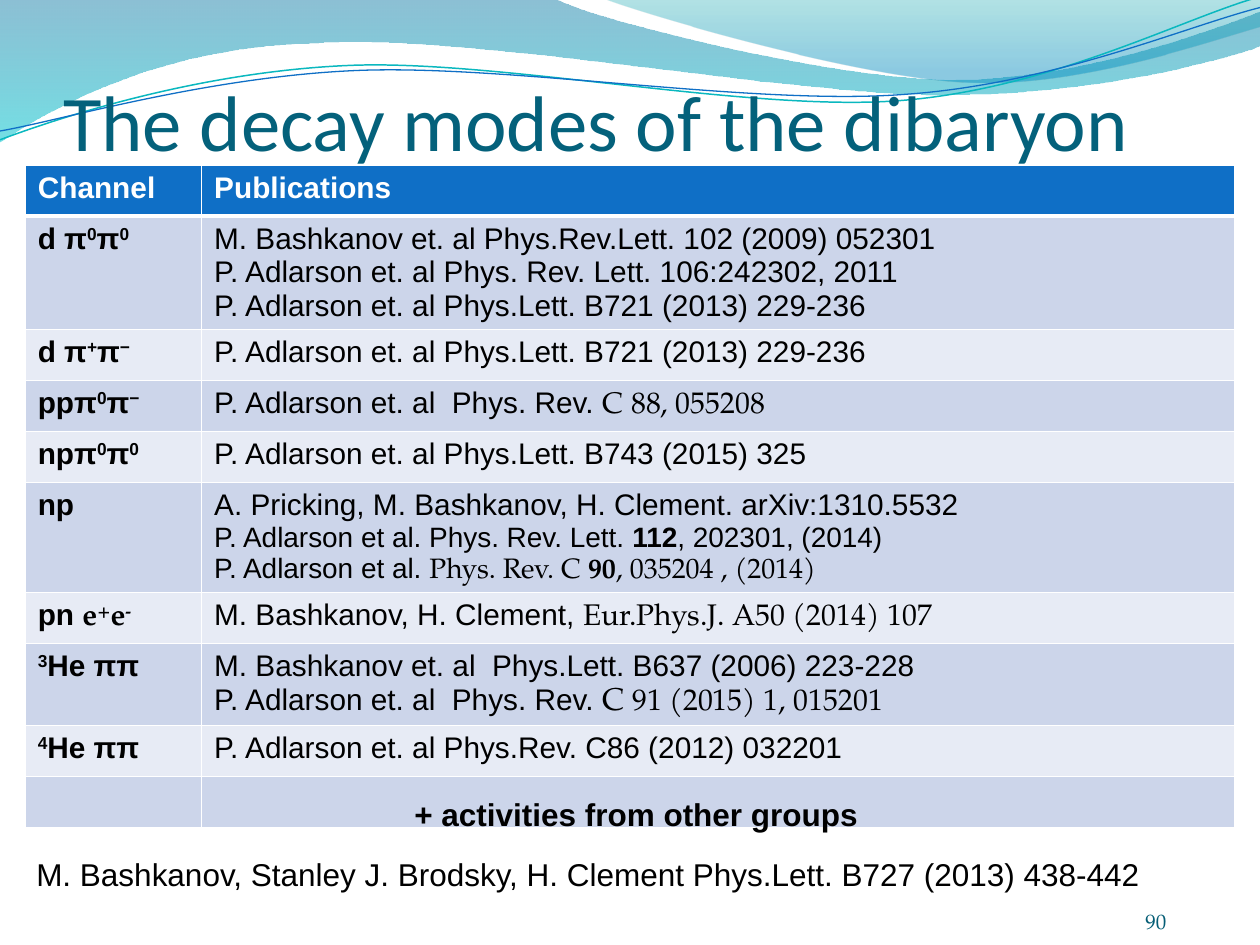
"""Build the slide that lists the decay modes of the dibaryon."""
from lxml.etree import SubElement as Sub
from pptx import Presentation
from pptx.dml.color import RGBColor as RGB
from pptx.enum.text import MSO_ANCHOR as Anchor, PP_ALIGN as Align
from pptx.oxml.ns import qn
from pptx.util import Inches, Pt

WHITE = RGB(0xFF, 0xFF, 0xFF)
BLACK = RGB(0, 0, 0)
BLUE = RGB(0x0F, 0x6F, 0xC6)
TEAL = RGB(0x0A, 0xB8, 0xBF)
TITLE = RGB(0x04, 0x61, 0x7B)
NUMBER = RGB(0x04, 0x5D, 0x75)
BANDS = RGB(0xCC, 0xD5, 0xEA), RGB(0xE7, 0xEB, 0xF5)
SANS, SERIF = "Arial", "TeX Gyre Pagella"
ROW = 8.1 / 20


def trace(start, parts, closed):
    """Draw lines (2 numbers) and Bezier curves (6 numbers) from start."""
    dots = [(round(part[i] * 100), round(part[i + 1] * 100))
            for part in [start, *parts] for i in range(0, len(part), 2)]
    pen = slide.shapes.build_freeform(*dots[0], scale=Inches(0.01))
    pen.add_line_segments(dots[1:], close=closed)
    shape = pen.convert_to_shape()
    shape.shadow.inherit = False
    steps = iter(list(shape._element.iter(qn("a:lnTo"))))
    for part in parts:
        step = next(steps)
        if len(part) == 6:
            step.tag = qn("a:cubicBezTo")
            for extra in (next(steps), next(steps)):
                step.append(extra[0])
                extra.getparent().remove(extra)
    return shape


def write(par, text, size, color, bold=False):
    """Add runs split by |, marked ^ raised, ~ serif, * bold, # one point larger."""
    for piece in text.split("|"):
        words = piece.lstrip("^~*#")
        marks = piece[:len(piece) - len(words)]
        run = par.add_run()
        run.text = words
        font = run.font
        font.size, font.color.rgb = Pt(size + marks.count("#")), color
        font.bold = bold or "*" in marks
        font.name = SERIF if "~" in marks else SANS
        if "^" in marks:
            font._element.set("baseline", "30000")


deck = Presentation()
deck.slide_width, deck.slide_height = Inches(10), Inches(7.5)
slide = deck.slides.add_slide(deck.slide_layouts[5])

waves = [
    ((0, 0), [(4.4, -0.01), (4.76, 0.17, 6.64, 0.63, 7.58, 0.63),
              (8.53, 0.63, 9.58, 0.26, 10, 0.09), (10.01, 0.36),
              (9.83, 0.44, 8.7, 0.76, 7.46, 0.75), (6.22, 0.75, 3.82, 0.28, 2.57, 0.34),
              (1.29, 0.36, 0.46, 0.83, -0.01, 1.13)],
     [(0, RGB(0, 0x74, 0xA1), 45), (1, RGB(0, 0xC6, 0xCF), 55)]),
    ((4.79, -0.01), [(5.09, 0.11, 6.82, 0.62, 7.69, 0.65),
                     (8.56, 0.69, 9.61, 0.32, 10, 0.21), (10, 0)],
     [(0, RGB(0, 0xA1, 0xA9), 30), (0.8, RGB(0, 0x8B, 0xBF), 45)]),
]
for start, parts, stops in waves:
    wave = trace(start, parts, True)
    wave.line.fill.background()
    wave.fill.gradient()
    wave.fill.gradient_angle = 270
    for stop, (place, color, alpha) in zip(wave.fill.gradient_stops, stops):
        stop.position, stop.color.rgb = place, color
        tint = stop._gs.find(qn("a:srgbClr"))
        Sub(tint, qn("a:alpha")).set("val", str(alpha * 1000))

curves = [
    ((0, 1.11), [(0.48, 0.93, 1.58, 0.57, 2.77, 0.52), (3.95, 0.47, 5.93, 0.89, 7.13, 0.8),
                 (8.33, 0.71, 9.38, 0.15, 9.98, -0.02)], TEAL, 0.85),
    ((0, 1.04), [(0.47, 0.96, 1.64, 0.61, 2.83, 0.56), (4.03, 0.51, 5.97, 0.84, 7.17, 0.75),
                 (8.36, 0.67, 9.41, 0.21, 10, 0.06)], BLUE, 0.75),
]
for start, parts, color, width in curves:
    curve = trace(start, parts, False)
    curve.fill.background()
    curve.line.color.rgb, curve.line.width = color, Pt(width)

title = slide.shapes.title
title.left, title.top, title.width, title.height = map(Inches, (0.5, 0.08, 9, 1.25))
frame = title.text_frame
frame.text = "The decay modes of the dibaryon"
frame.vertical_anchor = Anchor.BOTTOM
frame.margin_left = frame.margin_right = frame.margin_bottom = 0
frame.paragraphs[0].alignment = Align.LEFT
font = frame.paragraphs[0].runs[0].font
font.name, font.size, font.color.rgb = "Calibri", Pt(45), TITLE
slide.shapes._spTree.append(title._element)

rows = [
    (ROW, "Channel", ["Publications"]),
    (0.9, "d π|^0|π|^0", ["M. Bashkanov et. al Phys.Rev.Lett. 102 (2009) 052301",
                          "P. Adlarson et. al Phys. Rev. Lett. 106:242302, 2011",
                          "P. Adlarson et. al Phys.Lett. B721 (2013) 229-236"]),
    (ROW, "d π|^+|π|^−", ["P. Adlarson et. al Phys.Lett. B721 (2013) 229-236"]),
    (ROW, "ppπ|^0|π|^−", ["P. Adlarson et. al  Phys. Rev. |~C 88, 055208"]),
    (ROW, "npπ|^0|π|^0", ["P. Adlarson et. al Phys.Lett. B743 (2015) 325"]),
    (0.87, "np", ["A. Pricking, M. Bashkanov, H. Clement. arXiv:1310.5532",
                  "P. Adlarson et al. Phys. Rev. Lett. |*112|, 202301, (2014)",
                  "P. Adlarson et al. |~Phys. Rev. C |~*90|~, 035204 , (2014)"]),
    (ROW, "pn |~e|~^+|~e|~^-", ["M. Bashkanov, H. Clement, |~Eur.Phys.J. A50 (2014) 107"]),
    (0.65, "^3|He ππ", ["M. Bashkanov et. al  Phys.Lett. B637 (2006) 223-228",
                        "P. Adlarson et. al  Phys. Rev. |~#C|~ 91 (2015) 1, 015201"]),
    (ROW, "^4|He ππ", ["P. Adlarson et. al Phys.Rev. C86 (2012) 032201"]),
    (ROW, "", []),
]
table = slide.shapes.add_table(len(rows), 2, Inches(0.2), Inches(1.31),
                               Inches(9.6), Inches(5.25)).table
table.columns[0].width, table.columns[1].width = Inches(1.4), Inches(8.2)
for r, (height, mode, papers) in enumerate(rows):
    table.rows[r].height = Inches(height)
    for c, lines in enumerate(([mode] if mode else [], papers)):
        cell = table.cell(r, c)
        props = cell._tc.get_or_add_tcPr()
        for side in "LRTB":
            thick = 3 if (r, side) in ((0, "B"), (1, "T")) else 1
            edge = Sub(props, qn("a:ln" + side), w=str(Pt(thick)))
            Sub(Sub(edge, qn("a:solidFill")), qn("a:srgbClr"), val=str(WHITE))
        cell.fill.solid()
        cell.fill.fore_color.rgb = BANDS[(r - 1) % 2] if r else BLUE
        for i, line in enumerate(lines):
            par = cell.text_frame.paragraphs[0] if i == 0 else cell.text_frame.add_paragraph()
            size = 16 if "et al." in line else 17
            write(par, line, size, BLACK if r else WHITE, r == 0 or c == 0)

notes = [
    (3.19, 6.26, 3.83, 0.4, "+ activities from other groups", 18, BLACK, True),
    (0.19, 6.74, 9.04, 0.71,
     "M. Bashkanov, Stanley J. Brodsky, H. Clement Phys.Lett. B727 (2013) 438-442",
     18, BLACK, False),
    (9.09, 7.01, 0.64, 0.4, "~90", 12, NUMBER, False),
]
for *place, text, size, color, bold in notes:
    frame = slide.shapes.add_textbox(*map(Inches, place)).text_frame
    frame.word_wrap = False
    write(frame.paragraphs[0], text, size, color, bold)
frame.word_wrap = True
frame.vertical_anchor = Anchor.BOTTOM
frame.margin_left = frame.margin_right = frame.margin_top = frame.margin_bottom = 0

deck.save("out.pptx")
